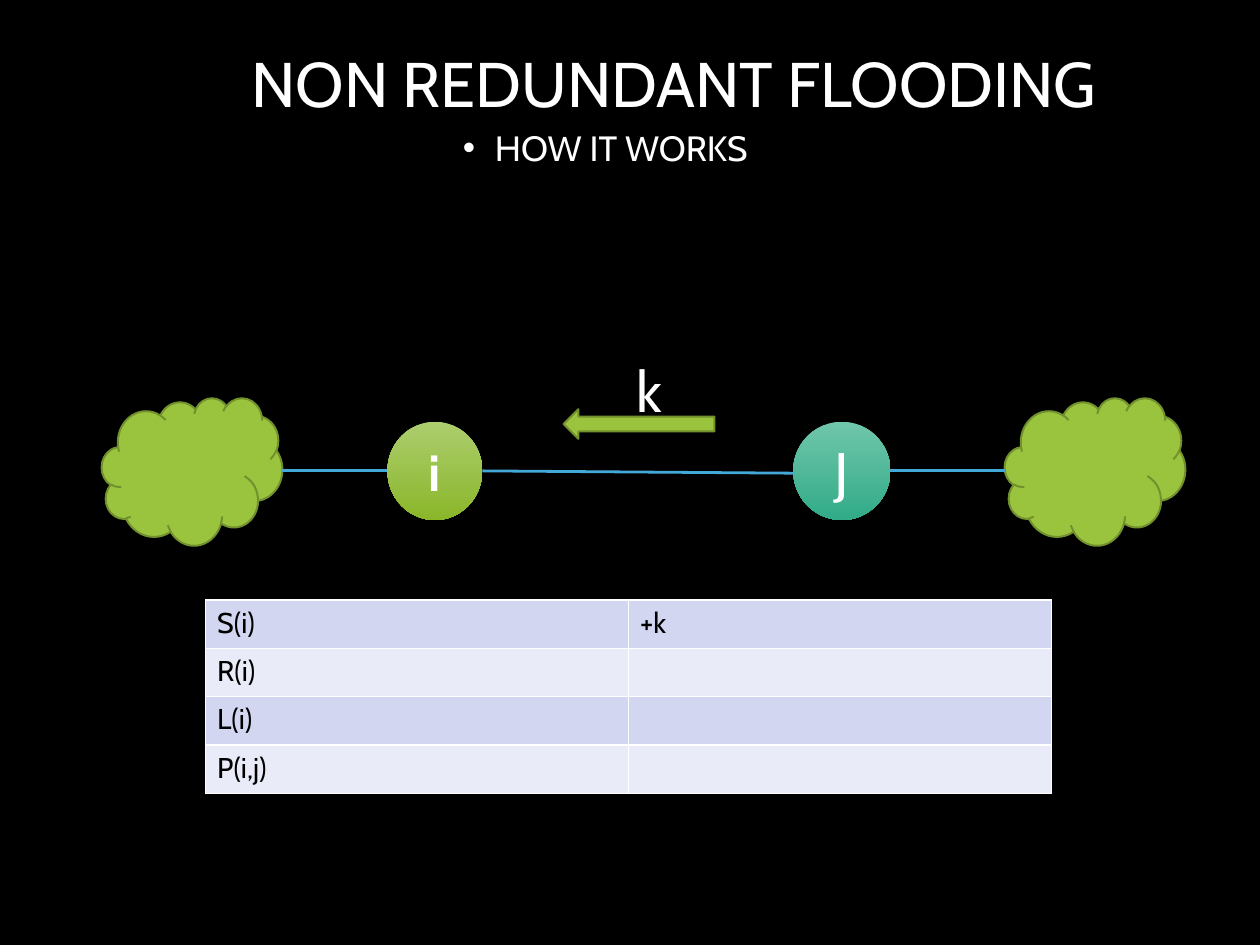
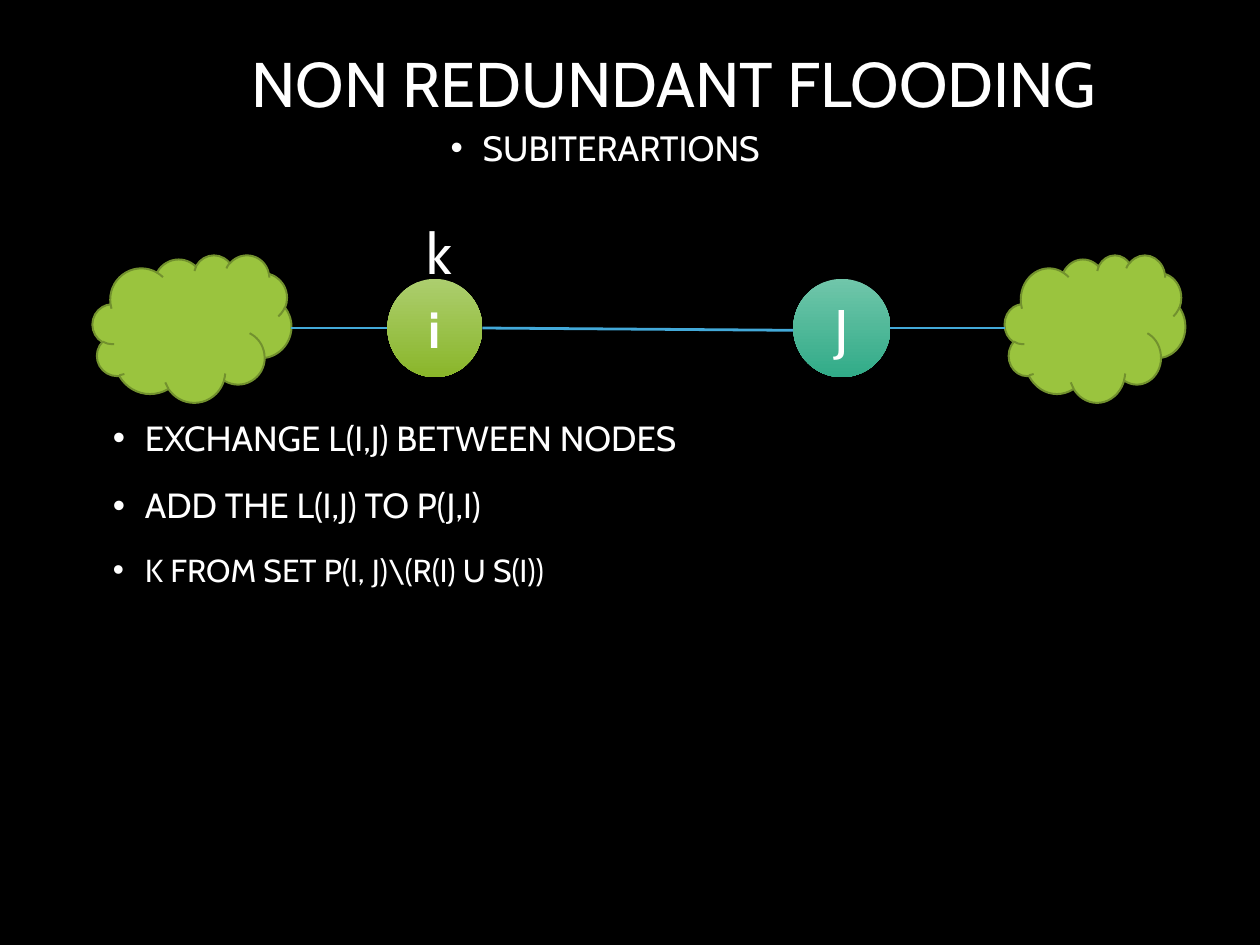
"""Build two slides on non redundant flooding between nodes i and J."""
from lxml import etree
from pptx import Presentation
from pptx.dml.color import RGBColor
from pptx.enum import shapes, text
from pptx.oxml import ns
from pptx.util import Cm, Inches, Pt

BLACK = RGBColor(0x00, 0x00, 0x00)
WHITE = RGBColor(0xFF, 0xFF, 0xFF)
GREEN = RGBColor(0x9A, 0xC4, 0x3E)
DARK_GREEN = RGBColor(0x72, 0x91, 0x2E)
BLUE = RGBColor(0x43, 0xA9, 0xD9)
NODE_GREEN = (RGBColor(0xAC, 0xCE, 0x6E), RGBColor(0x8A, 0xB6, 0x2A))
NODE_TEAL = (RGBColor(0x70, 0xC6, 0xAA), RGBColor(0x31, 0xAB, 0x88))
BANDS = (RGBColor(0xD3, 0xD6, 0xF0), RGBColor(0xEA, 0xEB, 0xF8))
FONT = "Cabin"
CENTER = text.PP_ALIGN.CENTER
SHAPE = shapes.MSO_SHAPE

TITLE = "NON REDUNDANT FLOODING"
NODES = [
    ("i", 3.39, 0.83, NODE_GREEN, 32, True),
    ("J", 6.94, 0.85, NODE_TEAL, 36, False),
]
RIGHT_CLOUD = (8.79, 1.58)
STATE_ROWS = [("S(i)", "+k"), ("R(i)", ""), ("L(i)", ""), ("P(i,j)", "")]
STEPS = [
    ("EXCHANGE L(I,J) BETWEEN NODES", 22),
    ("ADD THE L(I,J) TO P(J,I)", 22),
    ("K FROM SET P(I, J)\\(R(I) U S(I))", 20),
]


def style_paragraph(paragraph, size, color=WHITE, bold=False, align=None):
    paragraph.font.name = FONT
    paragraph.font.size = Pt(size)
    paragraph.font.bold = bold
    paragraph.font.color.rgb = color
    paragraph.alignment = align


def add_bullet(paragraph):
    properties = paragraph._p.get_or_add_pPr()
    properties.set("marL", str(Inches(0.28)))
    properties.set("indent", str(Inches(-0.28)))
    bullet_color = etree.SubElement(properties, ns.qn("a:buClr"))
    etree.SubElement(bullet_color, ns.qn("a:srgbClr"), val=str(WHITE))
    etree.SubElement(properties, ns.qn("a:buFont"), typeface="Arial")
    etree.SubElement(properties, ns.qn("a:buChar"), char="•")


def add_text(slide, box, lines, spacing=1.0, bullets=False, align=None,
             anchor=text.MSO_ANCHOR.TOP, wrap=True):
    frame = slide.shapes.add_textbox(*map(Inches, box)).text_frame
    frame.word_wrap = wrap
    frame.vertical_anchor = anchor
    for index, (line, size) in enumerate(lines):
        paragraph = frame.add_paragraph() if index else frame.paragraphs[0]
        paragraph.text = line
        if bullets:
            add_bullet(paragraph)
        paragraph.line_spacing = spacing
        if index:
            paragraph.space_before = Pt(11)
        style_paragraph(paragraph, size, align=align)


def add_green_shape(slide, kind, *box):
    shape = slide.shapes.add_shape(kind, *map(Inches, box))
    shape.shadow.inherit = False
    shape.fill.solid()
    shape.fill.fore_color.rgb = GREEN
    shape.line.color.rgb = DARK_GREEN
    shape.line.width = Pt(1.25)


def add_node(slide, axis, label, left, width, colors, size, bold):
    box = (left, axis - 0.43, width, 0.86)
    shape = slide.shapes.add_shape(SHAPE.FLOWCHART_CONNECTOR, *map(Inches, box))
    shape.shadow.inherit = False
    shape.fill.gradient()
    shape.fill.gradient_angle = 270
    for stop, color in zip(shape.fill.gradient_stops, colors):
        stop.color.rgb = color
    shape.line.fill.background()
    shape.text_frame.vertical_anchor = text.MSO_ANCHOR.MIDDLE
    paragraph = shape.text_frame.paragraphs[0]
    paragraph.text = label
    style_paragraph(paragraph, size, bold=bold, align=CENTER)


def add_link(slide, *ends):
    line = slide.shapes.add_connector(
        shapes.MSO_CONNECTOR.STRAIGHT, *map(Inches, ends))
    line.line.color.rgb = BLUE
    line.line.width = Pt(1.75)
    etree.SubElement(line._element.spPr, ns.qn("a:effectLst"))


def add_network(slide, axis, left_cloud, message_left, message_top):
    (i_left, i_width), (j_left, j_width) = [node[1:3] for node in NODES]
    for node in NODES:
        add_node(slide, axis, *node)
    for left, width in (left_cloud, RIGHT_CLOUD):
        add_green_shape(slide, SHAPE.CLOUD, left, axis - 0.64, width, 1.29)
    add_link(slide, sum(left_cloud), axis, i_left, axis)
    add_link(slide, RIGHT_CLOUD[0], axis, j_left + j_width, axis)
    add_link(slide, i_left + i_width, axis, j_left, axis + 0.02)
    add_text(slide, (message_left, message_top, 0.42, 0.71), [("k", 36)],
             wrap=False)


def add_state_table(slide):
    table = slide.shapes.add_table(
        len(STATE_ROWS), 2, Inches(1.8), Inches(5.25), Inches(7.4),
        Inches(1.69)).table
    table.first_row = False
    for row, values in enumerate(STATE_ROWS):
        for column, value in enumerate(values):
            cell = table.cell(row, column)
            cell.fill.solid()
            cell.fill.fore_color.rgb = BANDS[row % 2]
            paragraph = cell.text_frame.paragraphs[0]
            paragraph.text = value
            style_paragraph(paragraph, 18, BLACK)


def add_slide(presentation, subtitle):
    slide = presentation.slides.add_slide(presentation.slide_layouts[6])
    slide.background.fill.solid()
    slide.background.fill.fore_color.rgb = BLACK
    add_text(slide, (1.21, -0.2, 9.37, 1.92), [(TITLE, 39.7)], 0.9,
             align=CENTER, anchor=text.MSO_ANCHOR.MIDDLE)
    add_text(slide, (0.61, 1.02, 9.37, 0.52), [(subtitle, 22.1)], 1.1,
             bullets=True, align=CENTER)
    return slide


def main():
    presentation = Presentation()
    presentation.slide_width = Cm(28)
    presentation.slide_height = Cm(21)

    slide = add_slide(presentation, "HOW IT WORKS")
    add_network(slide, 4.12, (0.89, 1.58), 5.47, 3.06)
    add_green_shape(slide, SHAPE.LEFT_ARROW, 4.93, 3.58, 1.32, 0.26)
    add_state_table(slide)

    slide = add_slide(presentation, "SUBITERARTIONS")
    add_network(slide, 2.87, (0.81, 1.74), 3.63, 1.85)
    add_text(slide, (0.89, 3.52, 9.37, 4.13), STEPS, 1.2, bullets=True)

    presentation.save("out.pptx")


if __name__ == "__main__":
    main()
